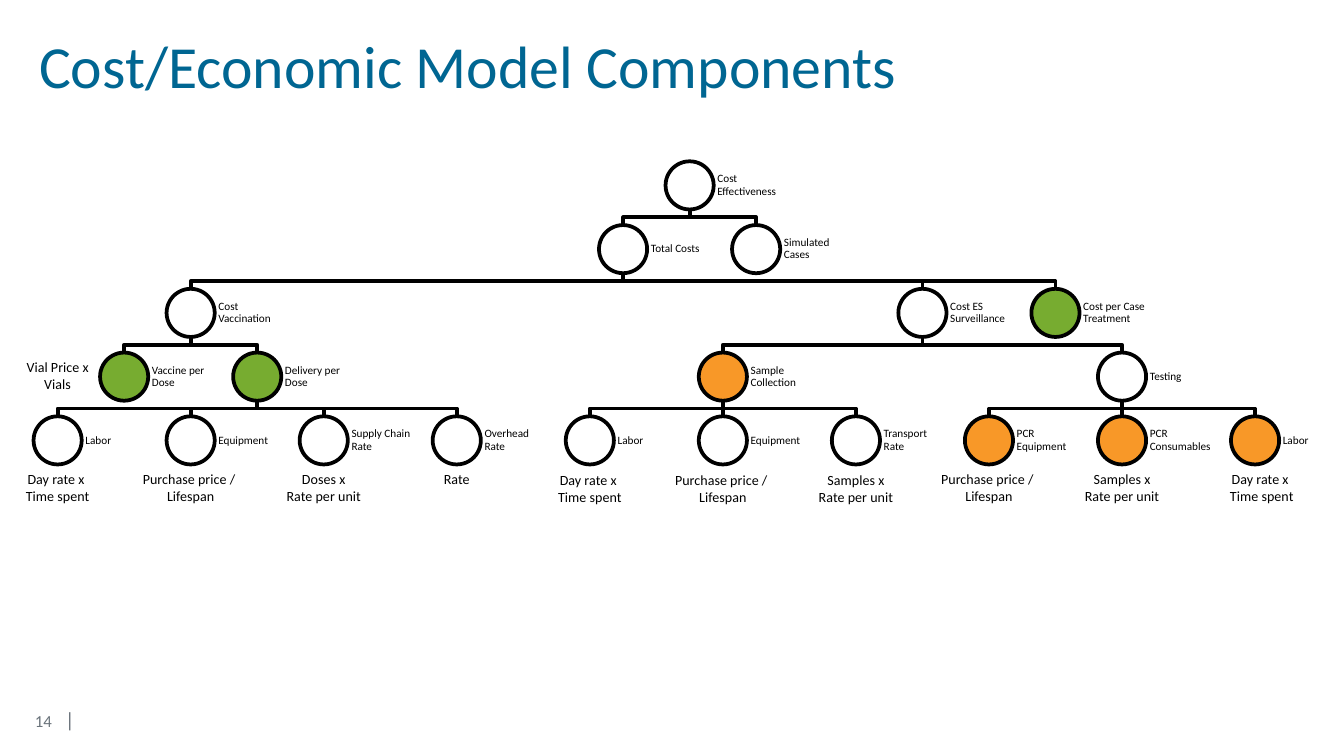
from lxml.etree import SubElement
from pptx import Presentation
from pptx.dml.color import RGBColor
from pptx.enum.shapes import MSO_CONNECTOR, MSO_SHAPE
from pptx.enum.text import MSO_ANCHOR, PP_ALIGN
from pptx.oxml.ns import qn
from pptx.util import Cm, Pt

COLORS = {
    "title": "006692", "footer": "6A737B", "black": "000000",
    "white": "FFFFFF", "green": "77AC30", "orange": "F89828",
}
FIRST_X, COLUMN_STEP = 1.09, 22.63 / 9
FIRST_TOP, ROW_STEP = 3.05, 4.82 / 4
DIAMETER = 0.91

# Row, column, column of the parent one row up, fill, label
NODES = [
    (0, 4.75, None, "white", "Cost Effectiveness"),
    (1, 4.25, 4.75, "white", "Total Costs"),
    (2, 1, 4.25, "white", "Cost Vaccination"),
    (3, 0.5, 1, "green", "Vaccine per Dose"),
    (3, 1.5, 1, "green", "Delivery per Dose"),
    (4, 0, 1.5, "white", "Labor"),
    (4, 1, 1.5, "white", "Equipment"),
    (4, 2, 1.5, "white", "Supply Chain Rate"),
    (4, 3, 1.5, "white", "Overhead Rate"),
    (2, 6.5, 4.25, "white", "Cost ES Surveillance"),
    (3, 5, 6.5, "orange", "Sample Collection"),
    (4, 4, 5, "white", "Labor"),
    (4, 5, 5, "white", "Equipment"),
    (4, 6, 5, "white", "Transport Rate"),
    (3, 8, 6.5, "white", "Testing"),
    (4, 7, 8, "orange", "PCR Equipment"),
    (4, 8, 8, "orange", "PCR Consumables"),
    (4, 9, 8, "orange", "Labor"),
    (2, 7.5, 4.25, "green", "Cost per Case Treatment"),
    (1, 5.25, 4.75, "white", "Simulated Cases"),
]

# Column, top, width, lines
DAY_RATE = ["Day rate x ", "Time spent"]
PURCHASE = ["Purchase price / ", "Lifespan"]
SAMPLES = ["Samples x", "Rate per unit"]
FORMULAS = [
    (0, 8.76, 1.73, DAY_RATE),
    (1, 8.76, 2.34, PURCHASE),
    (2, 8.76, 1.93, ["Doses x", "Rate per unit"]),
    (3, 8.76, 1.02, ["Rate"]),
    (0, 6.65, 1.7, ["Vial Price x", "Vials"]),
    (4, 8.78, 1.73, DAY_RATE),
    (5, 8.78, 2.34, PURCHASE),
    (6, 8.78, 1.93, SAMPLES),
    (7, 8.76, 2.34, PURCHASE),
    (8, 8.76, 1.93, SAMPLES),
    (9.05, 8.76, 1.73, DAY_RATE),
]


def write(paragraph, text, size, color="black"):
    run = paragraph.add_run()
    run.text = text
    run.font.name = "Calibri"
    run.font.size = Pt(size)
    run.font.color.rgb = RGBColor.from_string(COLORS[color])


def set_frame(frame, margins, **settings):
    """Set the left/right and top/bottom margins in cm, then other frame values."""
    side, end = map(Cm, margins)
    values = {"margin_left": side, "margin_right": side,
              "margin_top": end, "margin_bottom": end, **settings}
    for key, value in values.items():
        setattr(frame, key, value)


deck = Presentation()
deck.slide_width, deck.slide_height = Cm(25.4), Cm(14.29)
slide = deck.slides.add_slide(deck.slide_layouts[5])
shapes = slide.shapes

# Title
title = shapes.title
title.left, title.top, title.width, title.height = Cm(0.51), Cm(0.38), Cm(24.26), Cm(1.7)
set_frame(title.text_frame, (0.23, 0.1), vertical_anchor=MSO_ANCHOR.MIDDLE, word_wrap=True)
heading = title.text_frame.paragraphs[0]
heading.alignment = PP_ALIGN.LEFT
write(heading, "Cost/Economic Model Components", 32, "title")

# Page number, with a tab stop before the bar
page_number = shapes.add_textbox(Cm(0.51), Cm(13.08), Cm(1.07), Cm(1.04)).text_frame
set_frame(page_number, (0.15, 0.08), vertical_anchor=MSO_ANCHOR.MIDDLE, word_wrap=False)
number_line = page_number.paragraphs[0]
tabs = SubElement(number_line._p.get_or_add_pPr(), qn("a:tabLst"))
SubElement(tabs, qn("a:tab"), pos=str(Cm(0.57)), algn="l")
write(number_line, "14\t", 9, "footer")
write(number_line, "|", 11, "footer")

# Tree links, behind the nodes
for row, column, parent, _, _ in NODES:
    if parent is None:
        continue
    x, parent_x = (Cm(FIRST_X + COLUMN_STEP * c) for c in (column, parent))
    end_y = Cm(FIRST_TOP + ROW_STEP * row)
    start_y = Cm(FIRST_TOP + ROW_STEP * (row - 1) + DIAMETER)
    if x == parent_x:
        link = shapes.add_connector(MSO_CONNECTOR.STRAIGHT, x, start_y, x, end_y)
        SubElement(link._element.spPr, qn("a:effectLst"))
    else:
        middle_y = (start_y + end_y) // 2
        outline = shapes.build_freeform(parent_x, start_y)
        outline.add_line_segments(
            [(parent_x, middle_y), (x, middle_y), (x, end_y)], close=False)
        link = outline.convert_to_shape()
        link.fill.background()
        link.shadow.inherit = False
    link.line.color.rgb = RGBColor.from_string(COLORS["black"])
    link.line.width = Pt(2)

# Tree nodes with their labels
for row, column, _, fill, label in NODES:
    left = FIRST_X + COLUMN_STEP * column - DIAMETER / 2
    top = Cm(FIRST_TOP + ROW_STEP * row)
    node = shapes.add_shape(MSO_SHAPE.OVAL, Cm(left), top, Cm(DIAMETER), Cm(DIAMETER))
    node.shadow.inherit = False
    node.fill.solid()
    node.fill.fore_color.rgb = RGBColor.from_string(COLORS[fill])
    node.line.color.rgb = RGBColor.from_string(COLORS["black"])
    node.line.width = Pt(2)

    caption = shapes.add_textbox(Cm(left + DIAMETER), top, Cm(1.37), Cm(DIAMETER)).text_frame
    set_frame(caption, (0.07, 0.07), vertical_anchor=MSO_ANCHOR.MIDDLE, word_wrap=True)
    caption.paragraphs[0].line_spacing = 0.9
    write(caption.paragraphs[0], label, 6)

# Formulas beside and below the nodes
for column, top, width, lines in FORMULAS:
    left = FIRST_X + COLUMN_STEP * column - width / 2
    height = 0.3 + 0.3 * len(lines)
    formula = shapes.add_textbox(Cm(left), Cm(top), Cm(width), Cm(height)).text_frame
    set_frame(formula, (0.25, 0.13), word_wrap=False)
    for index, line in enumerate(lines):
        paragraph = formula.add_paragraph() if index else formula.paragraphs[0]
        paragraph.alignment = PP_ALIGN.CENTER
        write(paragraph, line, 7.5)

deck.save("out.pptx")
